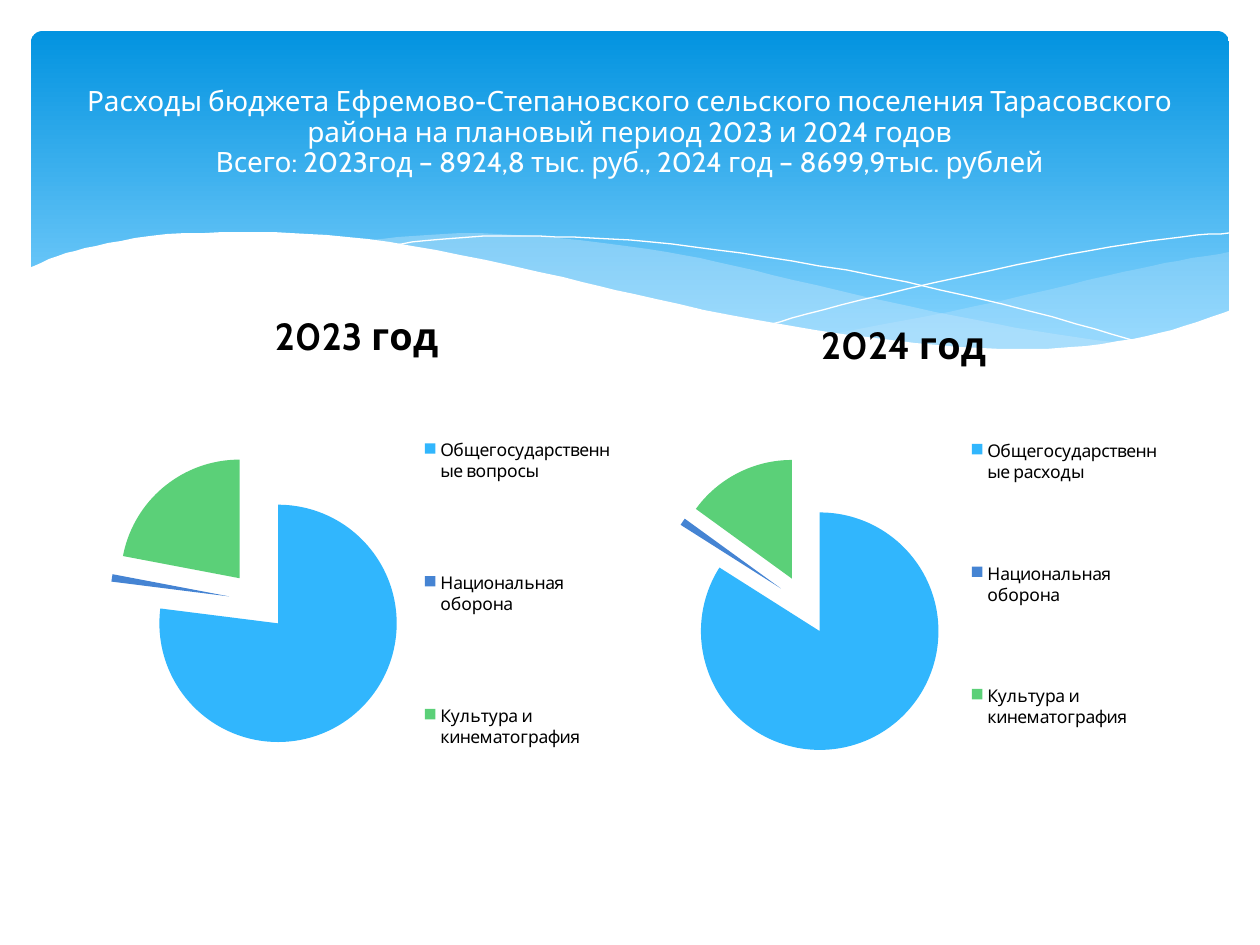
from dataclasses import dataclass

from lxml import etree
from pptx import Presentation
from pptx.chart.data import CategoryChartData
from pptx.dml.color import RGBColor
from pptx.enum.chart import XL_CHART_TYPE, XL_LEGEND_POSITION
from pptx.enum.shapes import MSO_SHAPE
from pptx.enum.text import MSO_ANCHOR, PP_ALIGN
from pptx.oxml.ns import qn
from pptx.util import Pt

PIE = XL_CHART_TYPE.PIE
RIGHT = XL_LEGEND_POSITION.RIGHT
ROUND = MSO_SHAPE.ROUNDED_RECTANGLE
MIDDLE = MSO_ANCHOR.MIDDLE
CENTER = PP_ALIGN.CENTER

SCALE = 914400 / 126  # EMU in one px
FONT = "Cabin"
COLORS = {
    "top": "0293E0", "low": "83D3FE", "mist": "C6E7FC",
    "white": "FFFFFF", "black": "000000",
    "blue": "31B6FD", "navy": "4584D3", "green": "5BD078",
}
SLICES = ("blue", "navy", "green")

Point = tuple[int, int]
Box = tuple[int, int, int, int]


@dataclass
class Wave:
    runs: list[list[Point]]  # smooth runs, joined at corners
    fill: str = ""           # no fill means an open white line
    alpha: int = 100


@dataclass
class Pie:
    title: str
    series: str
    first: str
    values: tuple[int, int, int]
    box: Box
    plot: Box
    legend: Box


WAVES = [
    Wave([[(1229, 252), (1178, 261), (1123, 272), (1048, 290), (949, 312), (833, 334)],
          [(833, 334), (888, 341), (939, 346), (1012, 350), (1076, 348),
           (1130, 340), (1178, 330), (1229, 311)]], "mist", 29),
    Wave([[(1125, 344), (1055, 334), (977, 320), (890, 302), (793, 280), (717, 262),
           (648, 249), (557, 238), (479, 233), (413, 236), (360, 241)],
          [(360, 241), (431, 251), (509, 266), (566, 280), (668, 302), (757, 321),
           (838, 335), (910, 345), (989, 350), (1056, 350), (1125, 344)]], "mist", 40),
    Wave([[(389, 246), (422, 241), (471, 237), (524, 236), (591, 238), (672, 244),
           (766, 257), (876, 276), (1002, 304), (1095, 329), (1143, 343)]]),
    Wave([[(772, 324), (823, 310), (907, 289), (1016, 265), (1110, 247),
           (1182, 237), (1229, 233)]]),
    Wave([[(1231, 310), (1184, 326), (1133, 339), (1071, 347), (1019, 349), (937, 345),
           (842, 334), (730, 315), (634, 294), (563, 277), (460, 255), (368, 239),
           (290, 233), (223, 232), (150, 236), (96, 246), (58, 256), (29, 268)],
          [(29, 415), (1231, 415)]], "white"),
]

PIES = [
    Pie("2023 год", "Series 1", "Общегосударственные вопросы", (77, 1, 22),
        (93, 284, 527, 561), (110, 453, 297, 297), (428, 349, 190, 489)),
    Pie("2024 год", "2024 год", "Общегосударственные расходы", (84, 1, 15),
        (640, 294, 527, 550), (657, 457, 297, 297), (975, 360, 190, 448)),
]
OTHERS = ("Национальная оборона", "Культура и кинематография")
TITLE = ("Расходы бюджета Ефремово-Степановского сельского поселения Тарасовского "
         "района на плановый период 2023 и 2024 годов\v"
         "Всего: 2023год – 8924,8 тыс. руб., 2024 год – 8699,9тыс. рублей")


def px(value: float) -> int:
    return round(value * SCALE)


def place(box: Box) -> list[int]:
    return [px(side) for side in box]


def tint(name: str) -> RGBColor:
    return RGBColor.from_string(COLORS[name])


def smooth(run: list[Point], steps: int = 4) -> list[tuple[float, float]]:
    """Catmull-Rom curve through the points of a run."""
    ends = [run[0], *run, run[-1]]
    curve = [run[0]]
    for a, b, c, d in zip(ends, ends[1:], ends[2:], ends[3:]):
        for step in range(1, steps + 1):
            t = step / steps
            curve.append(tuple(
                (2 * q + (r - p) * t + (2 * p - 5 * q + 4 * r - s) * t ** 2
                 + (3 * q - p - 3 * r + s) * t ** 3) / 2
                for p, q, r, s in zip(a, b, c, d)))
    return curve


def add_wave(slide, wave: Wave) -> None:
    dots = [dot for run in wave.runs for dot in smooth(run)]
    pen = slide.shapes.build_freeform(*dots[0], scale=SCALE)
    pen.add_line_segments(dots[1:], close=bool(wave.fill))
    shape = pen.convert_to_shape()
    shape.shadow.inherit = False
    if not wave.fill:
        shape.fill.background()
        shape.line.color.rgb = tint("white")
        shape.line.width = Pt(0)
        return
    shape.line.fill.background()
    shape.fill.solid()
    shape.fill.fore_color.rgb = tint(wave.fill)
    if wave.alpha < 100:
        color = shape.fill._xPr.find(".//" + qn("a:srgbClr"))
        etree.SubElement(color, qn("a:alpha"), val=str(wave.alpha * 1000))


def set_layout(parent, index: int, part: Box, whole: Box, inner: bool = False) -> None:
    """Fix a chart part at its share of the whole chart."""
    for old in parent.findall(qn("c:layout")):
        parent.remove(old)
    layout = etree.Element(qn("c:layout"))
    parent.insert(index, layout)
    manual = etree.SubElement(layout, qn("c:manualLayout"))
    x, y, w, h = part
    left, top, wide, high = whole
    shares = {"x": (x - left) / wide, "y": (y - top) / high, "w": w / wide, "h": h / high}
    marks = {"layoutTarget": "inner"} if inner else {}
    marks |= {"xMode": "edge", "yMode": "edge"}
    marks |= {key: f"{share:.3f}" for key, share in shares.items()}
    for key, value in marks.items():
        etree.SubElement(manual, qn("c:" + key), val=value)


def add_pie(slide, pie: Pie) -> None:
    data = CategoryChartData()
    data.categories = (pie.first, *OTHERS)
    data.add_series(pie.series, pie.values)
    chart = slide.shapes.add_chart(PIE, *place(pie.box), data).chart
    chart.font.name, chart.font.size = FONT, Pt(18)
    chart.font.color.rgb = tint("black")

    # Heading and legend
    chart.has_title = True
    frame = chart.chart_title.text_frame
    frame.text = pie.title
    font = frame.paragraphs[0].runs[0].font
    font.name, font.size, font.bold = FONT, Pt(21.6), True
    font.color.rgb = tint("black")
    chart.has_legend = True
    legend = chart.legend
    legend.position = RIGHT
    legend.include_in_layout = False
    legend.font.name, legend.font.size = FONT, Pt(10)
    legend.font.color.rgb = tint("black")
    set_layout(legend._element, 1, pie.legend, pie.box)

    # Exploded slices
    area = chart._chartSpace.chart.plotArea
    set_layout(area, 0, pie.plot, pie.box, inner=True)
    series = chart.plots[0].series[0]
    burst = etree.Element(qn("c:explosion"), val="25")
    series._element.find(qn("c:tx")).addnext(burst)
    for index, name in enumerate(SLICES):
        fill = series.points[index].format.fill
        fill.solid()
        fill.fore_color.rgb = tint(name)


def add_banner(slide) -> None:
    shape = slide.shapes.add_shape(ROUND, *place((31, 31, 1198, 340)))
    shape.adjustments[0] = 0.034
    shape.shadow.inherit = False
    shape.line.fill.background()
    shape.fill.gradient()
    shape.fill.gradient_angle = 270
    for stop, name, spot in zip(shape.fill.gradient_stops, ("top", "low"), (0, 0.9)):
        stop.color.rgb, stop.position = tint(name), spot


def add_title(slide) -> None:
    frame = slide.shapes.add_textbox(*place((63, 47, 1134, 172))).text_frame
    frame.word_wrap = True
    frame.vertical_anchor = MIDDLE
    frame.text = TITLE
    para = frame.paragraphs[0]
    para.alignment, para.line_spacing = CENTER, 0.9
    for run in para.runs:
        run.font.name, run.font.size = FONT, Pt(16)
        run.font.color.rgb = tint("white")


def main() -> None:
    deck = Presentation()
    deck.slide_width, deck.slide_height = px(1260), px(945)
    slide = deck.slides.add_slide(deck.slide_layouts[6])
    # Header
    add_banner(slide)
    for wave in WAVES:
        add_wave(slide, wave)
    add_title(slide)
    # Charts
    for pie in PIES:
        add_pie(slide, pie)
    deck.save("out.pptx")


if __name__ == "__main__":
    main()
